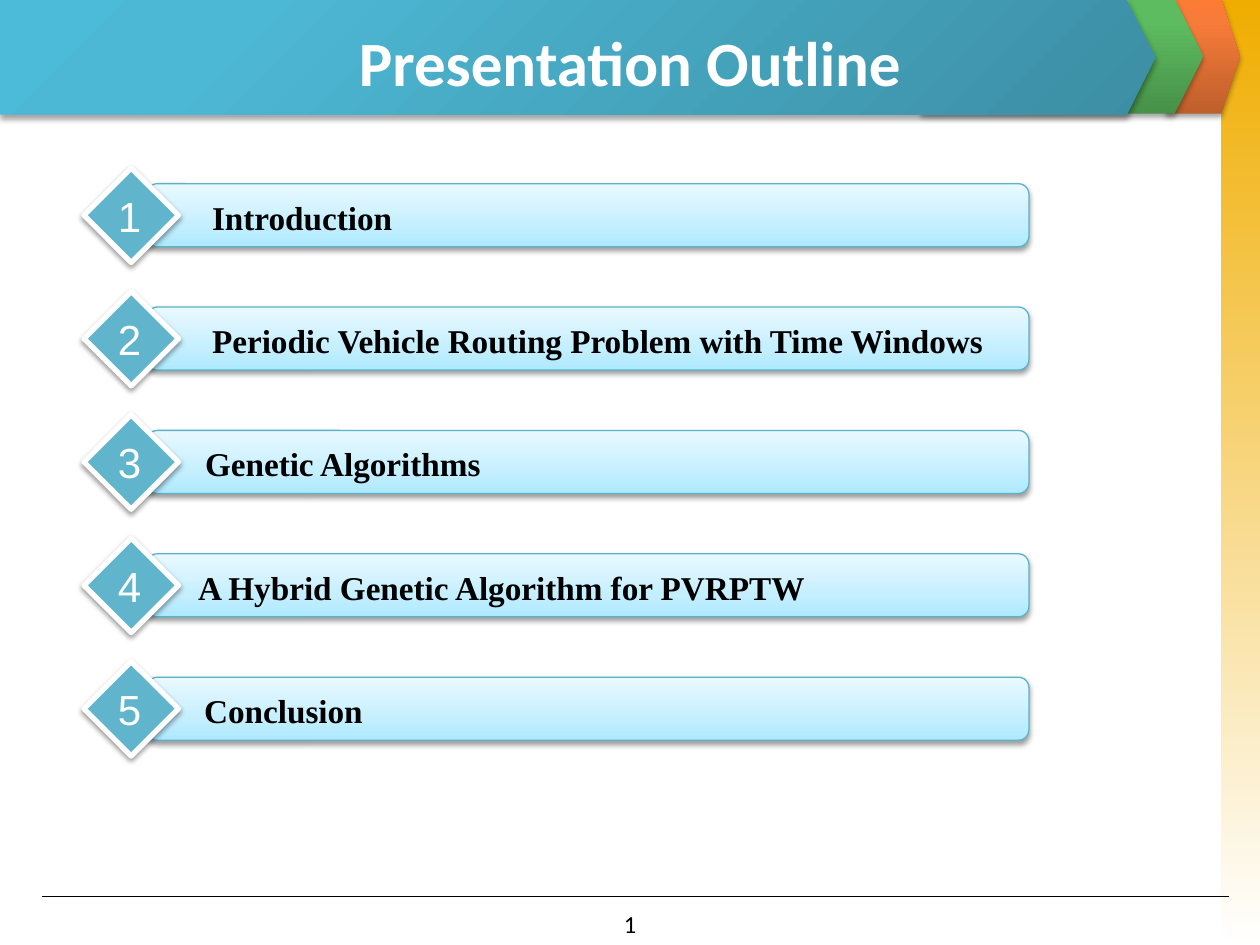
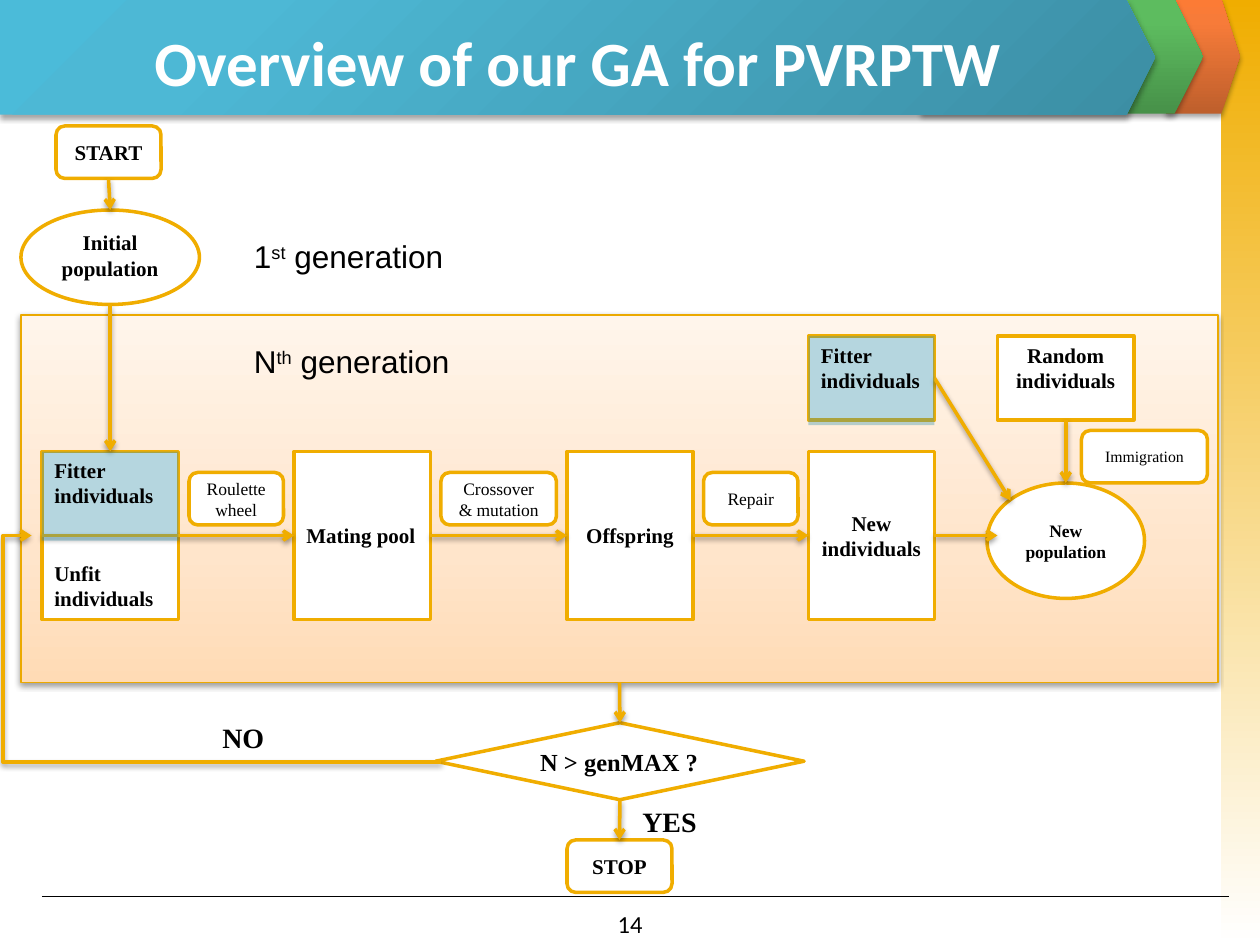
"""Build the outline slide and the genetic algorithm flowchart slide."""
from dataclasses import dataclass

from lxml import etree
from pptx import Presentation
from pptx.dml.color import RGBColor
from pptx.enum import shapes, text
from pptx.oxml.ns import qn
from pptx.util import Pt

SHAPE = shapes.MSO_SHAPE
ALIGN = text.PP_ALIGN
ANCHOR = text.MSO_ANCHOR
TOP, LEFT, BOTTOM, RIGHT = range(4)


@dataclass(frozen=True)
class Theme:
    black: str = "000000"
    white: str = "FFFFFF"
    amber: str = "F0AD00"
    panel_line: str = "EBA900"
    bar_line: str = "5BB3CA"
    diamond: str = "60B5CC"
    highlight: str = "3792AA"
    side: tuple = ((0, "F0AD00"), (100, "FFFFFF"))
    orange: tuple = ((0, "BE5F2C"), (80, "F77B39"), (100, "FC7B35"))
    green: tuple = ((0, "479149"), (80, "5DBC5F"), (100, "5BBF5E"))
    teal: tuple = ((0, "3C8EA4"), (80, "4DB8D5"), (100, "4BBBD9"))
    bar: tuple = ((0, "ADE9FF"), (35, "C5EFFF"), (100, "E9F9FF"))
    panel: tuple = ((0, "FFDBB5"), (35, "FFE5CB"), (100, "FFF5EB"))
    heading_font: str = "Calibri"
    body_font: str = "Times New Roman"
    plain_font: str = "Arial"
    title_size: float = 36
    number_size: float = 24
    item_size: float = 19
    generation_size: float = 18
    answer_size: float = 16
    small_title_size: float = 14
    node_size: float = 12
    step_size: float = 10
    tiny_size: float = 9
    thin: float = 0.75
    thick: float = 2
    band_shadow: tuple = (35, 1.8)
    shadow: tuple = (38, 1.6)


THEME = Theme()


def add_child(parent, tag, **attributes):
    return etree.SubElement(parent, qn(tag), {key: str(value) for key, value in attributes.items()})


def set_gradient(shape, stops, angle):
    """Fill with gradient stops, radiating from the lower right if angle is None."""
    shape.fill.gradient()
    gradient = shape._element.spPr.find(qn("a:gradFill"))
    for child in list(gradient):
        gradient.remove(child)
    stop_list = add_child(gradient, "a:gsLst")
    for position, color in stops:
        add_child(add_child(stop_list, "a:gs", pos=position * 1000), "a:srgbClr", val=color)
    if angle is None:
        circle = add_child(gradient, "a:path", path="circle")
        add_child(circle, "a:fillToRect", l=100000, t=100000)
    else:
        add_child(gradient, "a:lin", ang=angle * 60000, scaled=0)


def set_shadow(shape, shadow):
    """Give a downward shadow of the given opacity and distance, or none."""
    properties = shape._element.spPr
    effects = properties.find(qn("a:effectLst"))
    if effects is None:
        effects = add_child(properties, "a:effectLst")
    if shadow:
        opacity, distance = shadow
        outer = add_child(effects, "a:outerShdw", blurRad=Pt(3.1), dist=Pt(distance),
                          dir=90 * 60000, rotWithShape=0)
        color = add_child(outer, "a:srgbClr", val=THEME.black)
        add_child(color, "a:alpha", val=opacity * 1000)


def write_text(shape, content, *, size=THEME.node_size, font=THEME.body_font, color=THEME.black,
               bold=True, align=ALIGN.CENTER, anchor=ANCHOR.MIDDLE, margins=(7.2, 3.6, 7.2, 3.6)):
    """Write paragraphs split at line breaks, with superscripts between carets."""
    frame = shape.text_frame
    frame.word_wrap = True
    frame.vertical_anchor = anchor
    frame.margin_left, frame.margin_top, frame.margin_right, frame.margin_bottom = map(Pt, margins)
    for index, line in enumerate(content.split("\n")):
        paragraph = frame.add_paragraph() if index else frame.paragraphs[0]
        paragraph.alignment = align
        for part_index, part in enumerate(line.split("^")):
            run = paragraph.add_run()
            run.text = part
            run.font.size = Pt(size)
            run.font.name = font
            run.font.bold = bold
            run.font.color.rgb = RGBColor.from_string(color)
            if part_index % 2:
                run.font._element.set("baseline", "30000")


def add_label(slide, box, content, **text_format):
    label = slide.shapes.add_textbox(*map(Pt, box))
    write_text(label, content, **text_format)
    return label


def add_block(slide, kind, box, fill, *, line=None, width=THEME.thick, angle=270,
              shadow=None, opacity=None):
    """Add a preset shape with a solid or gradient fill."""
    shape = slide.shapes.add_shape(kind, *map(Pt, box))
    shape.shadow.inherit = False
    if isinstance(fill, tuple):
        set_gradient(shape, fill, angle)
    else:
        shape.fill.solid()
        shape.fill.fore_color.rgb = RGBColor.from_string(fill)
        if opacity:
            color = shape._element.spPr.find(qn("a:solidFill")).find(qn("a:srgbClr"))
            add_child(color, "a:alpha", val=opacity * 1000)
    if line:
        shape.line.color.rgb = RGBColor.from_string(line)
        shape.line.width = Pt(width)
    else:
        shape.line.fill.background()
    set_shadow(shape, shadow)
    return shape


def add_node(slide, kind, box, content="", **text_format):
    node = add_block(slide, kind, box, THEME.white, line=THEME.amber)
    if content:
        write_text(node, content, **text_format)
    return node


def add_line(slide, start, end, *, color=THEME.amber, width=THEME.thick, arrow=True,
             kind=shapes.MSO_CONNECTOR.STRAIGHT):
    """Join two ends, each a point or a pair of shape and side."""
    points = [(0, 0) if hasattr(first, "shape_id") else (first, second)
              for first, second in (start, end)]
    connector = slide.shapes.add_connector(kind, *(Pt(value) for point in points for value in point))
    if hasattr(start[0], "shape_id"):
        connector.begin_connect(*start)
    if hasattr(end[0], "shape_id"):
        connector.end_connect(*end)
    connector.line.color.rgb = RGBColor.from_string(color)
    connector.line.width = Pt(width)
    if arrow:
        add_child(connector.line._get_or_add_ln(), "a:tailEnd", type="arrow")
    set_shadow(connector, THEME.shadow if arrow else None)
    return connector


def add_return_arrow(slide, start, end, bend):
    """Add a bent arrow that leaves to the left and turns back to its end."""
    connector = add_line(slide, end, start, kind=shapes.MSO_CONNECTOR.ELBOW)
    properties = connector._element.spPr
    properties.find(qn("a:xfrm")).set("rot", str(180 * 60000))
    adjustments = properties.find(qn("a:prstGeom")).find(qn("a:avLst"))
    add_child(adjustments, "a:gd", name="adj1", fmla=f"val {round(bend * 100000)}")


def add_frame(presentation, title, title_left, number):
    """Add a slide with the shared bands, footer rule, title and number."""
    slide = presentation.slides.add_slide(presentation.slide_layouts[6])
    add_block(slide, SHAPE.RECTANGLE, (697.5, 0, 22.5, 540), THEME.side, angle=90)
    chevrons = (((666, -0.5, 42.5, 65.5), THEME.orange), ((526.5, -0.5, 161, 65.5), THEME.green))
    for box, stops in chevrons:
        chevron = add_block(slide, SHAPE.PENTAGON, box, stops, shadow=THEME.band_shadow)
        chevron.adjustments[0] = 0.25
    add_line(slide, (24, 512.5), (702, 512.5), color=THEME.black, width=THEME.thin, arrow=False)
    band = add_block(slide, SHAPE.PENTAGON, (0, 0, 660, 65.5), THEME.teal, angle=None,
                     shadow=THEME.band_shadow)
    band.adjustments[0] = 0.25
    add_label(slide, (title_left, 10, 648, 50), title, size=THEME.title_size,
              font=THEME.heading_font, color=THEME.white)
    add_label(slide, (276, 516, 168, 18), number, size=THEME.small_title_size,
              font=THEME.heading_font, bold=False, anchor=ANCHOR.TOP)
    return slide


def add_outline_item(slide, index, content, indent):
    top = 96 + 70.5 * index
    bar = add_block(slide, SHAPE.ROUNDED_RECTANGLE, (84, top + 9, 504, 36), THEME.bar,
                    line=THEME.bar_line, width=THEME.thin, shadow=THEME.shadow)
    write_text(bar, content, size=THEME.item_size, align=ALIGN.LEFT, margins=(indent, 5, 0, 3))
    diamond = add_block(slide, SHAPE.DIAMOND, (48, top, 54, 54), THEME.diamond,
                        line=THEME.white, width=3, shadow=THEME.shadow)
    write_text(diamond, str(index + 1), size=THEME.number_size, font=THEME.plain_font,
               color=THEME.white, bold=False, margins=(0, 0, 2, 0))


def build_outline(presentation):
    slide = add_frame(presentation, "Presentation Outline", 36, "1")
    items = (("Introduction", 35.5),
             ("Periodic Vehicle Routing Problem with Time Windows", 35.5),
             ("Genetic Algorithms", 31.5),
             ("A Hybrid Genetic Algorithm for PVRPTW", 27.5),
             ("Conclusion", 31))
    for index, (content, indent) in enumerate(items):
        add_outline_item(slide, index, content, indent)


def build_flowchart(presentation):
    slide = add_frame(presentation, "Overview of our GA for PVRPTW", 6, "14")
    decision = add_node(slide, SHAPE.FLOWCHART_DECISION, (249, 413, 210.5, 44), "N > genMAX ?",
                        size=THEME.small_title_size, align=ALIGN.LEFT)
    panel = add_block(slide, SHAPE.RECTANGLE, (12, 180, 684, 210), THEME.panel,
                      line=THEME.panel_line, width=THEME.thin, shadow=THEME.shadow)
    for left, top, answer in ((120, 408, "NO"), (360, 456, "YES")):
        add_label(slide, (left, top, 56, 24.5), answer, size=THEME.answer_size,
                  align=ALIGN.LEFT, anchor=ANCHOR.TOP)

    start = add_node(slide, SHAPE.ROUNDED_RECTANGLE, (32, 72, 60, 30), "START")
    stop = add_node(slide, SHAPE.ROUNDED_RECTANGLE, (324, 480, 60, 30), "STOP")
    initial = add_node(slide, SHAPE.OVAL, (12, 120, 102, 54), "Initial population",
                       anchor=ANCHOR.TOP)
    pool = add_node(slide, SHAPE.RECTANGLE, (168, 258, 78, 96), "Mating pool", align=ALIGN.LEFT)
    population = add_node(slide, SHAPE.RECTANGLE, (24, 258, 78, 96), "Unfit individuals",
                          align=ALIGN.LEFT, anchor=ANCHOR.BOTTOM, margins=(7.2, 0, 7.2, 5))
    offspring = add_node(slide, SHAPE.RECTANGLE, (324, 258, 72, 96), "Offspring")
    new_individuals = add_node(slide, SHAPE.RECTANGLE, (462, 258, 72, 96), "New individuals")
    new_population = add_node(slide, SHAPE.OVAL, (564, 276, 90, 66), "New\npopulation",
                              size=THEME.step_size)
    fitter = add_node(slide, SHAPE.RECTANGLE, (462, 192, 72, 48))
    random_individuals = add_node(slide, SHAPE.RECTANGLE, (570, 192, 78, 48),
                                  "Random\nindividuals", anchor=ANCHOR.TOP)
    for left, width, step in ((108, 54, "Roulette wheel"), (252, 66, "Crossover & mutation"),
                              (402, 54, "Repair")):
        add_node(slide, SHAPE.ROUNDED_RECTANGLE, (left, 270, width, 30), step,
                 size=THEME.step_size, bold=False)
    add_node(slide, SHAPE.ROUNDED_RECTANGLE, (618, 246, 72, 30), "Immigration",
             size=THEME.tiny_size, bold=False)

    arrows = (((population, LEFT), (pool, LEFT)),
              ((pool, RIGHT), (offspring, LEFT)),
              ((offspring, RIGHT), (new_individuals, LEFT)),
              ((new_individuals, RIGHT), (570, 306)),
              ((fitter, RIGHT), (577.5, 286)),
              ((random_individuals, BOTTOM), (new_population, TOP)),
              ((start, BOTTOM), (initial, TOP)),
              ((63, 174), (population, TOP)),
              ((panel, BOTTOM), (decision, TOP)),
              ((decision, BOTTOM), (stop, TOP)))
    for begin, end in arrows:
        add_line(slide, begin, end)
    add_return_arrow(slide, (252, 435.5), (18, 306), 1.07)

    for top, generation in ((132, "1^st^ generation"), (192, "N^th^ generation")):
        add_label(slide, (138, top, 156, 29), generation, size=THEME.generation_size,
                  font=THEME.plain_font, bold=False, align=ALIGN.LEFT, anchor=ANCHOR.TOP)
    for left, top, width in ((24, 258, 78), (462, 192, 72)):
        highlight = add_block(slide, SHAPE.RECTANGLE, (left, top, width, 51), THEME.highlight,
                              opacity=37)
        write_text(highlight, "Fitter individuals", align=ALIGN.LEFT, anchor=ANCHOR.TOP)


def main():
    presentation = Presentation()
    presentation.slide_width, presentation.slide_height = Pt(720), Pt(540)
    build_outline(presentation)
    build_flowchart(presentation)
    presentation.save("out.pptx")


if __name__ == "__main__":
    main()
